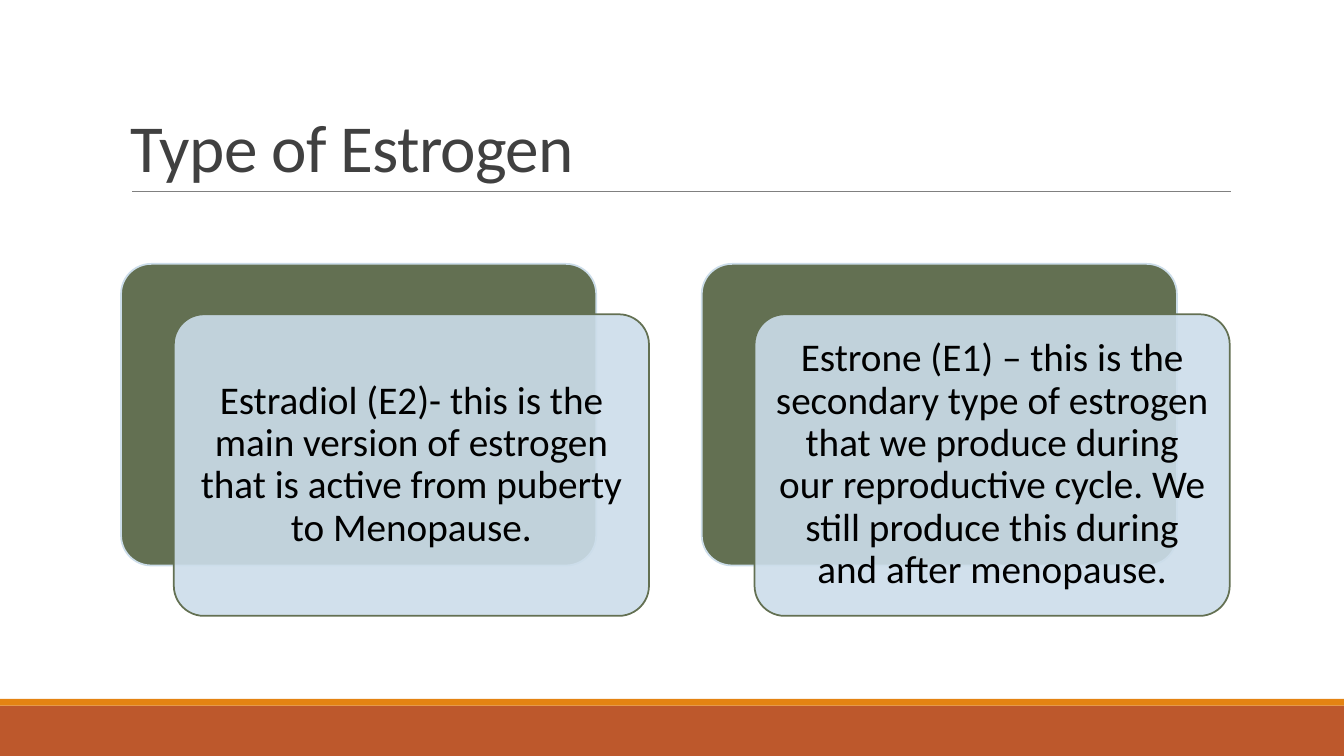
from dataclasses import dataclass
from lxml import etree
from pptx import Presentation, util as u
from pptx.dml.color import RGBColor
from pptx.enum import shapes, text
from pptx.oxml import ns

Cm, Pt = u.Cm, u.Pt


@dataclass(frozen=True)
class Theme:
    font: str = "Calibri"
    head: str = "404040"
    ink: str = "000000"
    rule: str = "808080"
    rust: str = "BD582C"
    gold: str = "E48312"
    moss: str = "637052"
    sky: str = "CCDDEA"
    title: int = 48
    body: int = 28


THEME = Theme()
WIDE, HIGH = 33.87, 19.05
TYPES = [
    "Estradiol (E2)- this is the main version of estrogen that is active "
    "from puberty to Menopause.",
    "Estrone (E1) – this is the secondary type of estrogen that we produce "
    "during our reproductive cycle. We still produce this during and after "
    "menopause.",
]


def block(slide, kind, box, fill, edge=None):
    shape = slide.shapes.add_shape(kind, *map(Cm, box))
    shape.shadow.inherit = False
    shape.fill.solid()
    shape.fill.fore_color.rgb = RGBColor.from_string(fill)
    if edge:
        shape.line.color.rgb = RGBColor.from_string(edge)
        shape.line.width = Pt(1.25)
    else:
        shape.line.fill.background()
    return shape


def panel(slide, box, fill, edge):
    shape = block(slide, shapes.MSO_SHAPE.ROUNDED_RECTANGLE, box, fill, edge)
    shape.adjustments[0] = 0.1
    return shape


def write(frame, words, size, color, lead, align, anchor):
    frame.word_wrap = True
    frame.vertical_anchor = anchor
    para = frame.paragraphs[0]
    para.alignment = align
    para.line_spacing = lead
    run = para.add_run()
    run.text = words
    run.font.name = THEME.font
    run.font.size = Pt(size)
    run.font.color.rgb = RGBColor.from_string(color)
    return run


def footer(slide, top, band=1.27, strip=0.17):
    """Draw the full-width band with a thin strip on top of it."""
    rect = shapes.MSO_SHAPE.RECTANGLE
    block(slide, rect, (0, top + strip, WIDE, band), THEME.rust)
    block(slide, rect, (0, top, WIDE, strip), THEME.gold)


def header(slide, box, words):
    left, top, width, height = box
    base = top + height
    rule = slide.shapes.add_connector(
        shapes.MSO_CONNECTOR.STRAIGHT,
        Cm(left + 0.28), Cm(base), Cm(left + width + 0.03), Cm(base))
    rule.line.color.rgb = RGBColor.from_string(THEME.rule)
    rule.line.width = Pt(0.5)
    etree.SubElement(rule._element.spPr, ns.qn("a:effectLst"))
    area = slide.shapes.add_textbox(*map(Cm, box))
    run = write(area.text_frame, words, THEME.title, THEME.head, 0.85,
                text.PP_ALIGN.LEFT, text.MSO_ANCHOR.BOTTOM)
    run.font._element.set("spc", "-50")


def card(slide, box, words, shift=(1.33, 1.27)):
    """Draw a dark panel with a translucent text panel set off over it."""
    left, top, width, height = box
    dx, dy = shift
    size = (width - dx, height - dy)
    panel(slide, (left, top, *size), THEME.moss, THEME.sky)
    front = panel(slide, (left + dx, top + dy, *size), THEME.sky, THEME.moss)
    tint = front._element.spPr.find(".//" + ns.qn("a:srgbClr"))
    etree.SubElement(tint, ns.qn("a:alpha")).set("val", "90000")
    frame = front.text_frame
    for side in ("left", "right", "top", "bottom"):
        setattr(frame, "margin_" + side, Cm(0.3))
    write(frame, words, THEME.body, THEME.ink, 0.9,
          text.PP_ALIGN.CENTER, text.MSO_ANCHOR.MIDDLE)


def cards(slide, box, items, gap=1.33):
    left, top, width, height = box
    each = (width - gap * (len(items) - 1)) / len(items)
    for i, words in enumerate(items):
        card(slide, (left + i * (each + gap), top, each, height), words)


def main():
    deck = Presentation()
    deck.slide_width, deck.slide_height = Cm(WIDE), Cm(HIGH)
    slide = deck.slides.add_slide(deck.slide_layouts[6])
    footer(slide, 17.61)
    header(slide, (3.05, 0.79, 27.94, 4.04), "Type of Estrogen")
    cards(slide, (3.05, 6.65, 27.94, 8.87), TYPES)
    deck.save("out.pptx")


if __name__ == "__main__":
    main()
